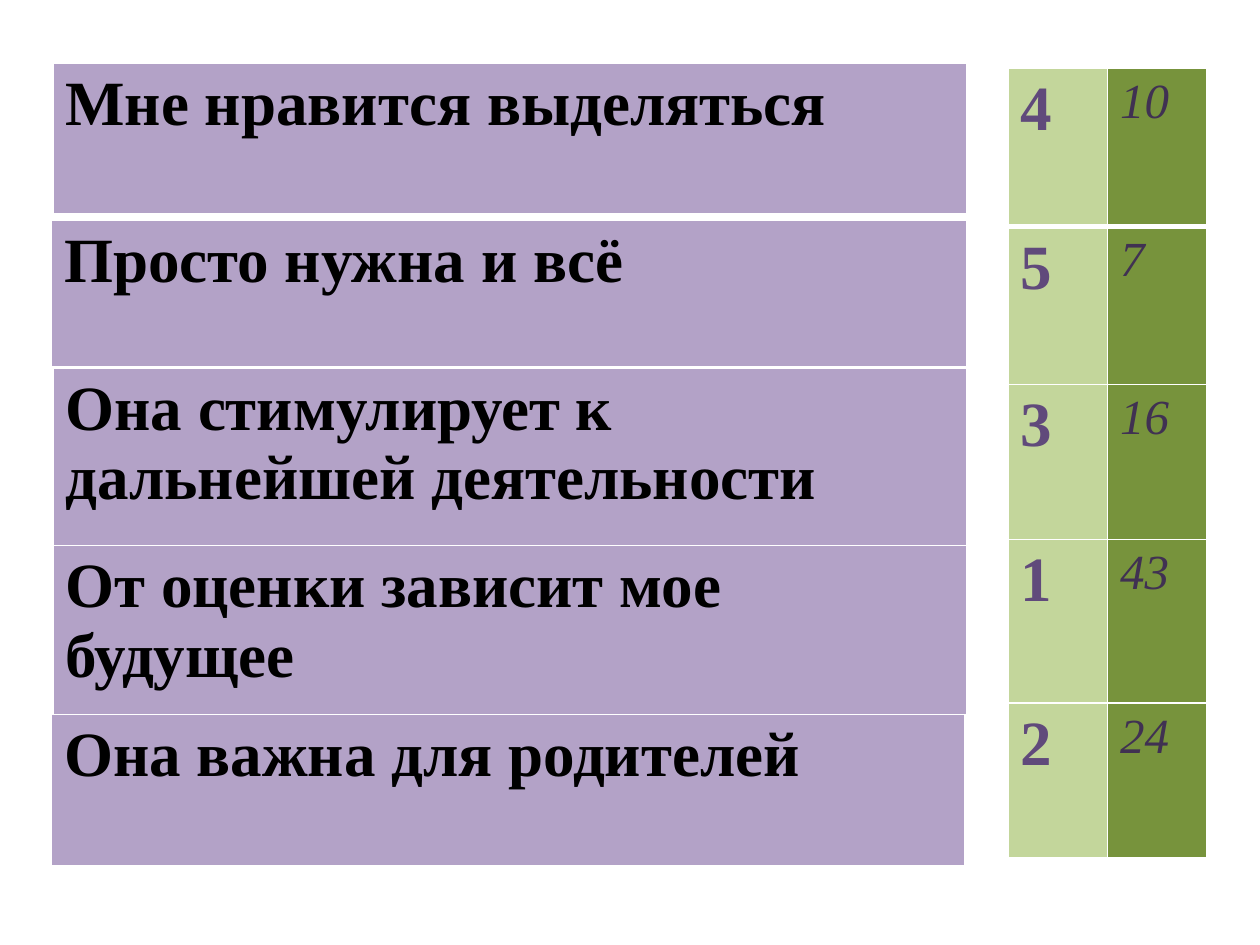
from dataclasses import dataclass

from lxml import etree
from pptx import Presentation
from pptx import util as u
from pptx.dml.color import RGBColor
from pptx.oxml import ns


@dataclass(frozen=True)
class Theme:
    font: str = "Times New Roman"
    large: int = 36
    small: int = 28
    black: str = "000000"
    white: str = "FFFFFF"
    lilac: str = "B3A2C7"
    plum: str = "604A7B"
    dark: str = "403152"
    light: str = "C3D69B"
    green: str = "77933C"
    thin: float = 1
    thick: float = 3


class Deck:
    def __init__(self, theme, slide):
        self.theme = theme
        self.slide = slide

    def table(self, left, top, cols, rows):
        """Add a plain table without banding."""
        frame = self.slide.shapes.add_table(
            len(rows), len(cols), u.Inches(left), u.Inches(top),
            u.Inches(sum(cols)), u.Inches(sum(rows)))
        grid = frame.table
        grid.first_row = grid.horz_banding = False
        for col, width in zip(grid.columns, cols):
            col.width = u.Inches(width)
        for row, height in zip(grid.rows, rows):
            row.height = u.Inches(height)
        return grid

    def cell(self, cell, words, size, color, fill, italic=False):
        cell.fill.solid()
        cell.fill.fore_color.rgb = RGBColor.from_string(fill)
        run = cell.text_frame.paragraphs[0].add_run()
        run.text = words
        font = run.font
        font.name, font.size = self.theme.font, u.Pt(size)
        font.bold, font.italic = not italic, italic
        font.color.rgb = RGBColor.from_string(color)

    def edge(self, cell, top, base):
        """Draw white borders; top and base are widths in points."""
        thin = self.theme.thin
        props = cell._tc.get_or_add_tcPr()
        sides = {"L": thin, "R": thin, "T": top, "B": base}
        for spot, (side, width) in enumerate(sides.items()):
            line = etree.Element(ns.qn(f"a:ln{side}"), w=str(u.Pt(width)))
            fill = etree.SubElement(line, ns.qn("a:solidFill"))
            etree.SubElement(fill, ns.qn("a:srgbClr"), val=self.theme.white)
            props.insert(spot, line)

    def label(self, left, top, width, height, words):
        t = self.theme
        cell = self.table(left, top, [width], [height]).cell(0, 0)
        self.cell(cell, words, t.large, t.black, t.lilac)
        self.edge(cell, t.thin, t.thick)

    def scores(self, left, top, cols, rows, pairs):
        """Add the ranks and counts, with a thick rule under the first row."""
        t = self.theme
        grid = self.table(left, top, cols, rows)
        for i, (rank, count) in enumerate(pairs):
            first, last = grid.cell(i, 0), grid.cell(i, 1)
            self.cell(first, rank, t.large, t.plum, t.light)
            self.cell(last, count, t.small, t.dark, t.green, italic=True)
            for cell in (first, last):
                self.edge(cell, t.thick if i == 1 else t.thin,
                          t.thick if i == 0 else t.thin)


def main():
    show = Presentation()
    show.slide_width, show.slide_height = u.Inches(10), u.Inches(7.5)
    deck = Deck(Theme(), show.slides.add_slide(show.slide_layouts[6]))

    deck.scores(8, 0.54, [0.79, 0.79], [1.26, 1.25, 1.23, 1.3, 1.23],
                [("4", "10"), ("5", "7"), ("3", "16"), ("1", "43"), ("2", "24")])

    labels = [
        (0.42, 0.5, 7.25, 1.21, "Мне нравится выделяться"),
        (0.41, 1.75, 7.26, 1.17, "Просто нужна и всё"),
        (0.42, 2.92, 7.25, 1.98, "Она стимулирует к дальнейшей деятельности"),
        (0.42, 4.33, 7.25, 1.4, "От оценки зависит мое будущее"),
        (0.41, 5.67, 7.25, 1.21, "Она важна для родителей"),
    ]
    for label in labels:
        deck.label(*label)

    show.save("out.pptx")


if __name__ == "__main__":
    main()
